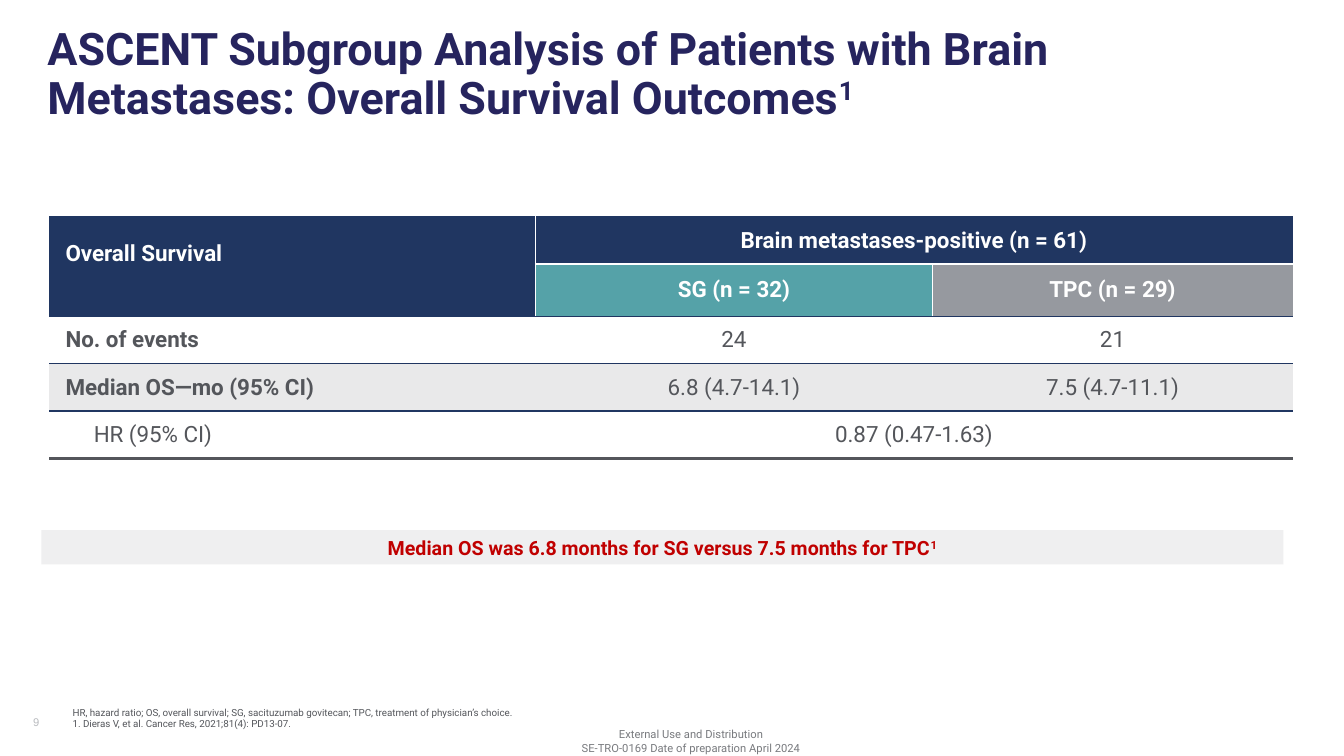
import pptx
import pptx.util
import pptx.dml.color
import pptx.enum.shapes
import pptx.enum.text
import pptx.oxml
import pptx.oxml.ns
from dataclasses import dataclass

Inches, Pt = pptx.util.Inches, pptx.util.Pt
Align = pptx.enum.text.PP_ALIGN
Anchor = pptx.enum.text.MSO_ANCHOR

# Content
TITLE = ("ASCENT Subgroup Analysis of Patients with Brain Metastases: "
         "Overall Survival Outcomes")
CLAIM = "Median OS was 6.8 months for SG versus 7.5 months for TPC"
MARK = "1"
NOTES = [
    "HR, hazard ratio; OS, overall survival; SG, sacituzumab govitecan; "
    "TPC, treatment of physician’s choice.",
    "1. Dieras V, et al. Cancer Res, 2021;81(4): PD13-07.",
]
FOOTER = ["External Use and Distribution",
          "SE-TRO-0169 Date of preparation April 2024"]
NUMBER = ["9"]
ROWS = [
    ["Overall Survival", "Brain metastases-positive (n = 61)", ""],
    ["", "SG (n = 32)", "TPC (n = 29)"],
    ["No. of events", "24", "21"],
    ["Median OS—mo (95% CI)", "6.8 (4.7‑14.1)", "7.5 (4.7-11.1)"],
    ["HR (95% CI)", "0.87 (0.47-1.63)", ""],
]
MERGES = [((0, 0), (1, 0)), ((0, 1), (0, 2)), ((4, 1), (4, 2))]
WIDTHS = [4.82, 3.94, 3.57]
HEIGHTS = [0.47, 0.51, 0.47, 0.47, 0.47]


@dataclass(frozen=True)
class Theme:
    font: str = "Roboto"
    plain: str = "Arial"
    title: str = "26245E"
    navy: str = "203661"
    teal: str = "55A2A8"
    steel: str = "96999F"
    band: str = "E9E9EA"
    white: str = "FFFFFF"
    text: str = "54565B"
    foot: str = "787A7E"
    faint: str = "B9BBBF"
    bar: str = "DCDDDF"
    red: str = "C00000"
    big: int = 32
    cell: int = 16
    claim: int = 14
    small: int = 8
    note: int = 7


T = Theme()
FILLS = [[T.navy] * 3, [T.navy, T.teal, T.steel],
         [T.white] * 3, [T.band] * 3, [T.white] * 3]

# Table rules: row, column, side, colour, points
RULES = [(row, col, side, tint, size)
         for row, side, tint, size in [(0, "T", T.navy, 1), (1, "B", T.navy, 1),
                                       (2, "T", T.navy, 1), (2, "B", T.navy, 1),
                                       (3, "T", T.navy, 1), (4, "B", T.text, 2)]
         for col in range(3)]
RULES += [(0, 0, "B", T.navy, 1)]
RULES += [(row, 0, "R", T.white, 1) for row in (0, 1)]
RULES += [(row, 1, "L", T.white, 1) for row in (0, 1)]
RULES += [(0, col, "B", T.white, 1) for col in (1, 2)]
RULES += [(1, col, "T", T.white, 1) for col in (1, 2)]
RULES += [(1, 1, "R", T.white, 1), (1, 2, "L", T.white, 1)]


def rgb(tint):
    return pptx.dml.color.RGBColor.from_string(tint)


def style(para, size, tint, bold=False, align=Align.LEFT, face=T.font):
    para.alignment = align
    font = para.font
    font.name, font.size, font.bold = face, Pt(size), bold
    font.color.rgb = rgb(tint)


def place(shape, left, top, width, height):
    shape.left, shape.top = Inches(left), Inches(top)
    shape.width, shape.height = Inches(width), Inches(height)


def raised(para, text):
    para.add_run().text = text
    run = para.add_run()
    run.text = MARK
    run._r.get_or_add_rPr().set("baseline", "30000")


def fill_lines(frame, lines, anchor, **look):
    frame.word_wrap = True
    frame.auto_size = pptx.enum.text.MSO_AUTO_SIZE.NONE
    frame.vertical_anchor = anchor
    for i, line in enumerate(lines):
        para = frame.paragraphs[0] if i == 0 else frame.add_paragraph()
        para.text = line
        style(para, **look)


def rule(cell, side, tint, size):
    props = cell._tc.get_or_add_tcPr()
    line = pptx.oxml.parse_xml(
        f'<a:ln{side} {pptx.oxml.ns.nsdecls("a")} w="{Pt(size)}"><a:solidFill>'
        f'<a:srgbClr val="{tint}"/></a:solidFill></a:ln{side}>')
    props.append(line)


def add_grid(slide):
    frame = slide.shapes.add_table(
        len(ROWS), len(WIDTHS), Inches(0.49), Inches(2.15),
        Inches(sum(WIDTHS)), Inches(sum(HEIGHTS)))
    grid = frame.table
    grid.first_row = grid.horz_banding = False
    key = grid._tbl.tblPr.find(pptx.oxml.ns.qn("a:tableStyleId"))
    key.text = "{2D5ABB26-0587-4C30-8999-92F81FD0307C}"
    for col, width in zip(grid.columns, WIDTHS):
        col.width = Inches(width)
    for row, height in zip(grid.rows, HEIGHTS):
        row.height = Inches(height)
    for first, last in MERGES:
        grid.cell(*first).merge(grid.cell(*last))
    for row, col, side, tint, size in sorted(
            RULES, key=lambda r: "LRTB".index(r[2])):
        rule(grid.cell(row, col), side, tint, size)

    for i, texts in enumerate(ROWS):
        for j, text in enumerate(texts):
            cell = grid.cell(i, j)
            cell.fill.solid()
            cell.fill.fore_color.rgb = rgb(FILLS[i][j])
            cell.vertical_anchor = Anchor.MIDDLE
            cell.margin_left = cell.margin_right = Inches(0.16)
            cell.margin_top = cell.margin_bottom = 0
            if text:
                cell.text = text
            style(cell.text_frame.paragraphs[0], T.cell,
                  T.white if i < 2 else T.text,
                  bold=i < 2 or (j == 0 and i < 4),
                  align=Align.CENTER if j else Align.LEFT)
    grid.cell(0, 0).margin_bottom = Inches(0.26)
    grid.cell(4, 0).margin_left = Inches(0.44)


def main():
    deck = pptx.Presentation()
    deck.slide_width, deck.slide_height = Inches(13.33), Inches(7.5)
    slide = deck.slides.add_slide(deck.slide_layouts[1])

    # Title
    title = slide.shapes.title
    place(title, 0.37, 0.22, 12.56, 1)
    fill_lines(title.text_frame, [""], Anchor.TOP,
               size=T.big, tint=T.title, bold=True)
    para = title.text_frame.paragraphs[0]
    raised(para, TITLE)
    para.line_spacing = 0.9

    # Footnotes
    body = slide.placeholders[1]
    place(body, 0.62, 6.52, 11.8, 0.77)
    fill_lines(body.text_frame, NOTES, Anchor.BOTTOM, size=T.note, tint=T.text)
    for para in body.text_frame.paragraphs:
        para.space_before = Pt(0)
        props = para._p.get_or_add_pPr()
        props.set("marL", "0")
        props.set("indent", "0")
        none = pptx.oxml.parse_xml(f'<a:buNone {pptx.oxml.ns.nsdecls("a")}/>')
        props.find(pptx.oxml.ns.qn("a:defRPr")).addprevious(none)

    # Survival table
    add_grid(slide)

    # Key message
    bar = slide.shapes.add_shape(
        pptx.enum.shapes.MSO_SHAPE.RECTANGLE,
        Inches(0.41), Inches(5.26), Inches(12.32), Inches(0.34))
    bar.shadow.inherit = False
    bar.line.fill.background()
    bar.fill.solid()
    bar.fill.fore_color.rgb = rgb(T.bar)
    tone = bar._element.spPr.find(".//" + pptx.oxml.ns.qn("a:srgbClr"))
    tone.append(pptx.oxml.parse_xml(
        f'<a:alpha {pptx.oxml.ns.nsdecls("a")} val="45000"/>'))
    fill_lines(bar.text_frame, [""], Anchor.MIDDLE, size=T.claim, tint=T.red,
               bold=True, align=Align.CENTER)
    raised(bar.text_frame.paragraphs[0], CLAIM)

    # Footer and page number
    for spot, lines, look in [
        ((5.14, 7.19, 3.43, 0.32), FOOTER,
         dict(tint=T.foot, align=Align.CENTER)),
        ((0.23, 7, 3, 0.32), NUMBER, dict(tint=T.faint, face=T.plain)),
    ]:
        box = slide.shapes.add_textbox(*map(Inches, spot))
        fill_lines(box.text_frame, lines, Anchor.MIDDLE, size=T.small, **look)

    deck.save("out.pptx")


if __name__ == "__main__":
    main()
